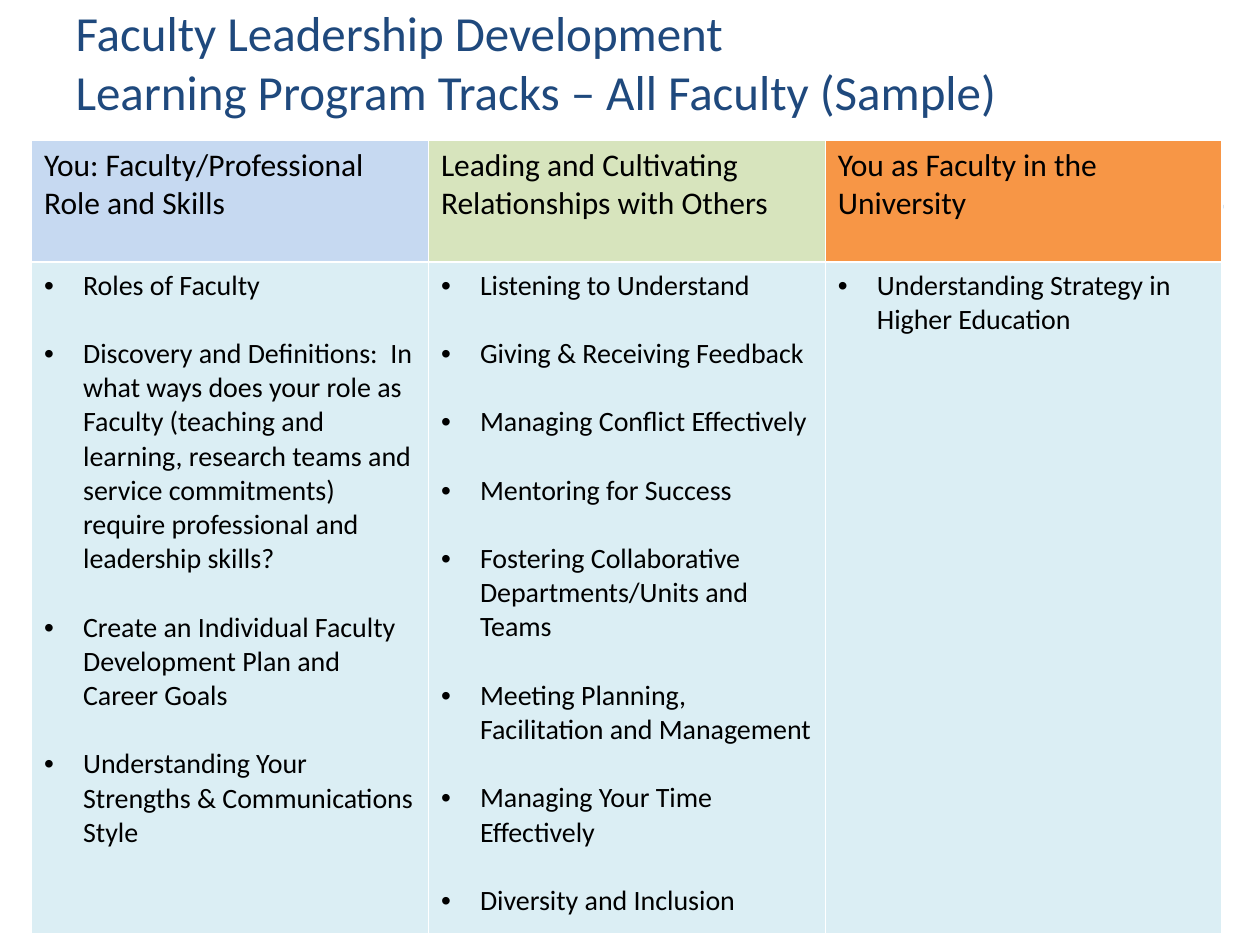
import pptx
import pptx.dml.color
import pptx.enum.shapes
import pptx.enum.text
import pptx.oxml
import pptx.oxml.ns
import pptx.util
from lxml import etree

Inches = pptx.util.Inches
Pt = pptx.util.Pt
RGBColor = pptx.dml.color.RGBColor
qn = pptx.oxml.ns.qn

NAVY = RGBColor(0x1F, 0x49, 0x7D)
BLACK = RGBColor(0, 0, 0)
WHITE = RGBColor(0xFF, 0xFF, 0xFF)
RULE_BLUE = RGBColor(0x96, 0xB8, 0xD8)
PALE_BLUE = RGBColor(0xC6, 0xD9, 0xF1)
PALE_GREEN = RGBColor(0xD7, 0xE4, 0xBD)
ORANGE = RGBColor(0xF7, 0x96, 0x46)
PALE_AQUA = RGBColor(0xDB, 0xEE, 0xF4)

TRACKS = [
    ("You: Faculty/Professional Role and Skills", PALE_BLUE, [
        "Roles of Faculty",
        "Discovery and Definitions:  In what ways does your role as Faculty "
        "(teaching and learning, research teams and service commitments) "
        "require professional and leadership skills?",
        "Create an Individual Faculty Development Plan and Career Goals",
        "Understanding Your Strengths & Communications Style",
    ]),
    ("Leading and Cultivating Relationships with Others", PALE_GREEN, [
        "Listening to Understand",
        "Giving & Receiving Feedback",
        "Managing Conflict Effectively",
        "Mentoring for Success",
        "Fostering Collaborative Departments/Units and Teams",
        "Meeting Planning, Facilitation and Management",
        "Managing Your Time Effectively",
        "Diversity and Inclusion",
    ]),
    ("You as Faculty in the University", ORANGE, [
        "Understanding Strategy in Higher Education",
    ]),
]


class SlideBuilder:
    font = "Calibri"
    title_size = Pt(28)
    header_size = Pt(18)
    body_size = Pt(16)
    item_gap = Pt(19.5)
    indent = Inches(0.31)

    def __init__(self, prs):
        self.slide = prs.slides.add_slide(prs.slide_layouts[5])

    def style(self, p, size, color):
        for r in p.runs:
            r.font.name = self.font
            r.font.size = size
            r.font.bold = False
            r.font.color.rgb = color

    def title(self, text, left, top, width, height):
        sp = self.slide.shapes.title
        sp.left, sp.top, sp.width, sp.height = map(Inches, (left, top, width, height))
        tf = sp.text_frame
        tf.text = text
        tf.word_wrap = True
        tf.auto_size = pptx.enum.text.MSO_AUTO_SIZE.NONE
        tf.vertical_anchor = pptx.enum.text.MSO_ANCHOR.MIDDLE
        p = tf.paragraphs[0]
        p.alignment = pptx.enum.text.PP_ALIGN.LEFT
        self.style(p, self.title_size, NAVY)

    def line(self, x1, y1, x2, y2, color, width):
        cxn = self.slide.shapes.add_connector(
            pptx.enum.shapes.MSO_CONNECTOR.STRAIGHT, *map(Inches, (x1, y1, x2, y2)))
        cxn.line.color.rgb = color
        cxn.line.width = Pt(width)
        etree.SubElement(cxn._element.spPr, qn("a:effectLst"))

    def borders(self, cell, color, width):
        tcPr = cell._tc.get_or_add_tcPr()
        for side in ("lnL", "lnR", "lnT", "lnB"):
            ln = etree.SubElement(tcPr, qn("a:" + side), w=str(Pt(width)))
            fill = etree.SubElement(ln, qn("a:solidFill"))
            etree.SubElement(fill, qn("a:srgbClr"), val=str(color))

    def bullet(self, p):
        pPr = p._p.get_or_add_pPr()
        pPr.set("marL", str(self.indent))
        pPr.set("indent", str(-self.indent))
        etree.SubElement(pPr, qn("a:buFont"), typeface="Arial")
        etree.SubElement(pPr, qn("a:buChar"), char="•")

    def cell(self, cell, lines, size, fill, bulleted=False):
        self.borders(cell, WHITE, 1)
        cell.fill.solid()
        cell.fill.fore_color.rgb = fill
        tf = cell.text_frame
        for i, text in enumerate(lines):
            p = tf.add_paragraph() if i else tf.paragraphs[0]
            p.text = text
            if i:
                p.space_before = self.item_gap
            if bulleted:
                self.bullet(p)
            self.style(p, size, BLACK)

    def track_table(self, tracks, left, top, col_width, row_heights):
        width, height = col_width * len(tracks), sum(row_heights)
        table = self.slide.shapes.add_table(
            len(row_heights), len(tracks), *map(Inches, (left, top, width, height))).table
        table.first_row = False
        table.horz_banding = False
        for row, row_height in zip(table.rows, row_heights):
            row.height = Inches(row_height)
        for col, (header, color, items) in enumerate(tracks):
            table.columns[col].width = Inches(col_width)
            self.cell(table.cell(0, col), [header], self.header_size, color)
            self.cell(table.cell(1, col), items, self.body_size, PALE_AQUA, bulleted=True)


def main():
    prs = pptx.Presentation()
    prs.slide_width, prs.slide_height = Inches(10), Inches(7.5)
    s = SlideBuilder(prs)
    s.line(0.35, 1.63, 9.71, 1.64, RULE_BLUE, 2)
    s.title("Faculty Leadership Development\v"
            "Learning Program Tracks – All Faculty (Sample)", 0.5, -0.13, 9.69, 1.24)
    s.track_table(TRACKS, 0.25, 1.11, 3.15, (0.97, 5.33))
    prs.save("out.pptx")


if __name__ == "__main__":
    main()
